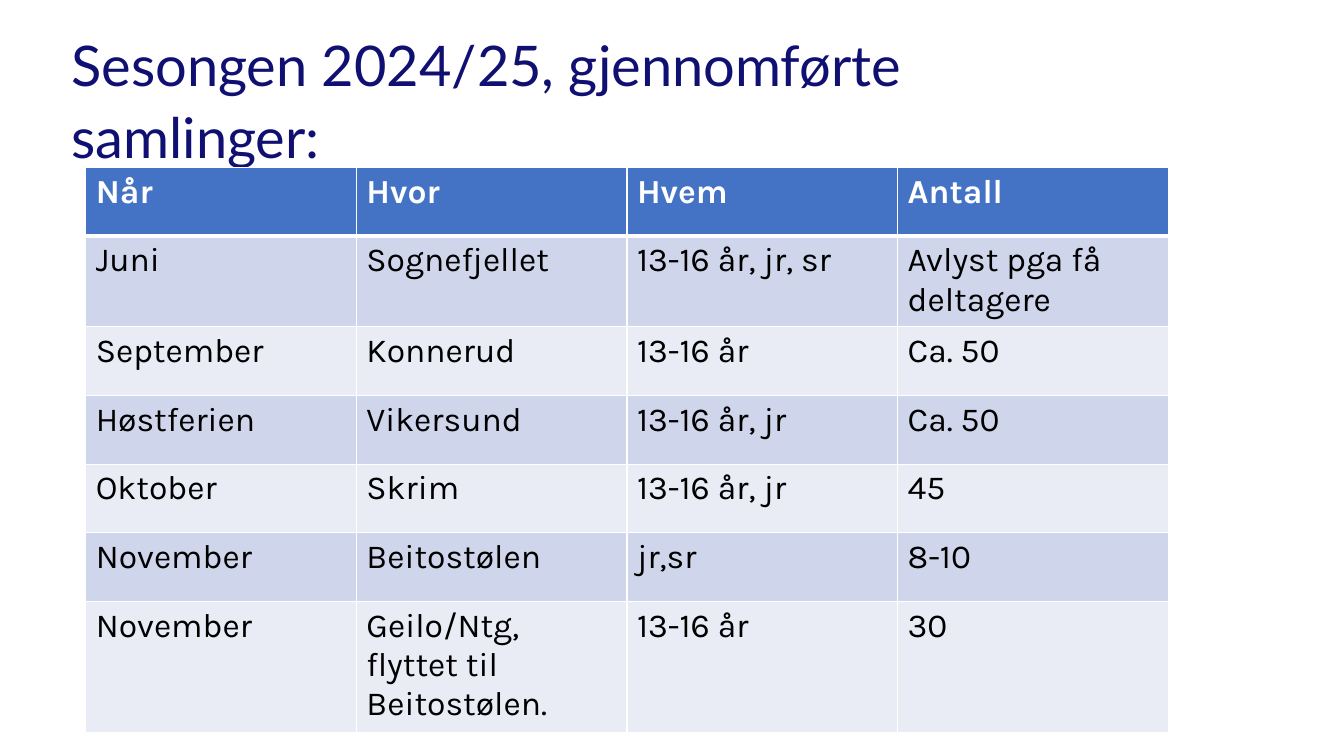
import pptx
import pptx.util
import pptx.dml.color
import pptx.oxml
import pptx.oxml.ns

Cm, Pt = pptx.util.Cm, pptx.util.Pt

HUES = {"navy": "101072", "blue": "4472C4", "dark": "CFD5EA",
        "pale": "E9EBF5", "white": "FFFFFF", "black": "000000"}

ROWS = [
    ["Når", "Hvor", "Hvem", "Antall"],
    ["Juni", "Sognefjellet", "13-16 år, jr, sr", "Avlyst pga få deltagere"],
    ["September", "Konnerud", "13-16 år", "Ca. 50"],
    ["Høstferien", "Vikersund", "13-16 år, jr", "Ca. 50"],
    ["Oktober", "Skrim", "13-16 år, jr", "45"],
    ["November", "Beitostølen", "jr,sr", "8-10"],
    ["November", "Geilo/Ntg, flyttet til Beitostølen.", "13-16 år", "30"],
]


class Page:
    """Slide with its fonts and colours."""
    head = "Lato"
    body = "Karla"

    def __init__(self, deck):
        self.slide = deck.slides.add_slide(deck.slide_layouts[6])

    def hue(self, name):
        return pptx.dml.color.RGBColor.from_string(HUES[name])

    def style(self, para, face, size, hue, bold=False):
        font = para.font
        font.name, font.size, font.bold = face, Pt(size), bold
        font.color.rgb = self.hue(hue)

    def title(self, text, left, top, width, height):
        box = self.slide.shapes.add_textbox(Cm(left), Cm(top), Cm(width), Cm(height))
        box.text_frame.word_wrap = True
        para = box.text_frame.paragraphs[0]
        para.text = text
        para.line_spacing = 1.07
        self.style(para, self.head, 40, "navy")

    def edge(self, cell, side, width):
        """Draw a white border on one side (L, R, T or B) of a cell."""
        line = pptx.oxml.parse_xml(
            f'<a:ln{side} {pptx.oxml.ns.nsdecls("a")} w="{Pt(width)}">'
            f'<a:solidFill><a:srgbClr val="{HUES["white"]}"/></a:solidFill>'
            f'</a:ln{side}>')
        cell._tc.get_or_add_tcPr().append(line)

    def cell(self, cell, text, fill, first, second):
        """Fill a cell; first and second say if it is in row 0 or row 1."""
        cell.text = text
        self.style(cell.text_frame.paragraphs[0], self.body, 24,
                   "white" if first else "black", first)
        widths = {"L": 1, "R": 1, "T": 3 if second else 1, "B": 3 if first else 1}
        for side, width in widths.items():
            self.edge(cell, side, width)
        cell.fill.solid()
        cell.fill.fore_color.rgb = self.hue(fill)

    def table(self, rows, left, top, wide, high):
        """Place a table whose columns are wide and rows high, in cm."""
        count = len(rows[0])
        grid = self.slide.shapes.add_table(
            len(rows), count, Cm(left), Cm(top),
            Cm(wide * count), Cm(high * len(rows))).table
        for r, row in enumerate(rows):
            fill = "blue" if r == 0 else "dark" if r % 2 else "pale"
            for c, text in enumerate(row):
                self.cell(grid.cell(r, c), text, fill, r == 0, r == 1)


def main():
    deck = pptx.Presentation()
    deck.slide_width, deck.slide_height = Cm(33.87), Cm(19.05)
    page = Page(deck)
    page.title("Sesongen 2024/25, gjennomførte samlinger:", 1.55, 0.53, 27.69, 3.9)
    page.table(ROWS, 2.16, 4.22, 6.82, 1.73)
    deck.save("out.pptx")


if __name__ == "__main__":
    main()
